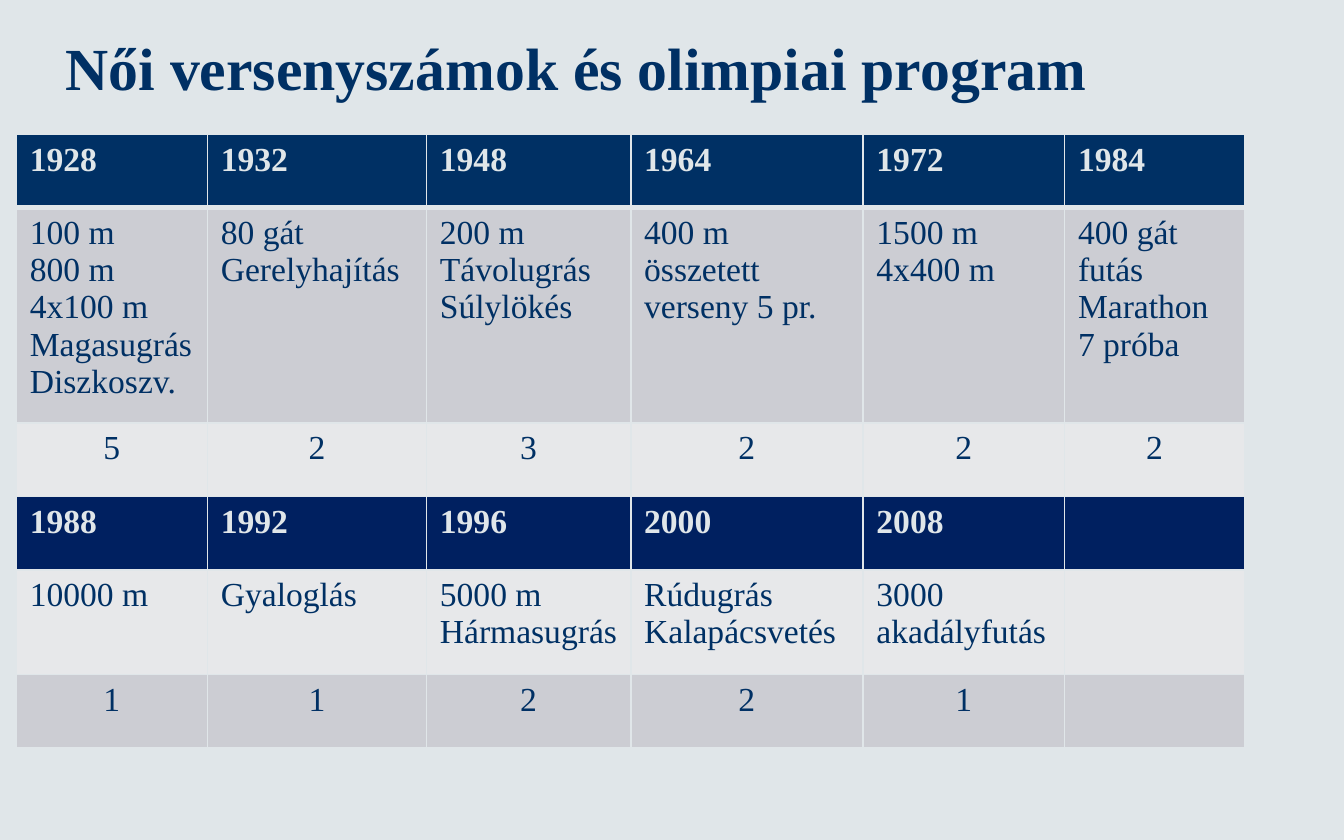
from lxml import etree
from pptx import Presentation
from pptx import util as u
from pptx.dml.color import RGBColor
from pptx.enum import text
from pptx.oxml.ns import qn

FONT = "Times New Roman"
NAVY, DEEP_NAVY, PALE = "003064", "002060", "E0E6E9"
DARK_BAND, LIGHT_BAND = "CCCDD3", "E7E8EA"

COLUMN_WIDTHS = [3.61, 4.14, 3.86, 4.39, 3.81, 3.4]
# Each row: height, fill, kind, cell texts (a line feed starts a new paragraph)
ROWS = [
    (1.39, NAVY, "years", ["1928", "1932", "1948", "1964", "1972", "1984"]),
    (3.99, DARK_BAND, "events", [
        "100 m\n800 m 4x100 m Magasugrás\nDiszkoszv.",
        "80 gát Gerelyhajítás",
        "200 m Távolugrás\nSúlylökés",
        "400 m összetett\nverseny 5 pr.",
        "1500 m 4x400 m",
        "400 gát futás Marathon\n7 próba"]),
    (1.39, LIGHT_BAND, "counts", ["5", "2", "3", "2", "2", "2"]),
    (1.39, DEEP_NAVY, "years", ["1988", "1992", "1996", "2000", "2008", ""]),
    (1.98, LIGHT_BAND, "events", [
        "10000 m", "Gyaloglás", "5000 m Hármasugrás",
        "Rúdugrás Kalapácsvetés", "3000 akadályfutás", ""]),
    (1.39, DARK_BAND, "counts", ["1", "1", "2", "2", "1", ""]),
]


def color(value):
    return RGBColor.from_string(value)


def set_font(paragraph, size, value, bold):
    font = paragraph.font
    font.name, font.size, font.bold = FONT, u.Pt(size), bold
    font.color.rgb = color(value)


def set_borders(cell, widths):
    """Draw the four cell borders; they must come before the fill."""
    properties = cell._tc.get_or_add_tcPr()
    for index, (side, width) in enumerate(widths.items()):
        line = etree.Element(qn(f"a:ln{side}"), w=str(u.Pt(width)))
        fill = etree.SubElement(line, qn("a:solidFill"))
        etree.SubElement(fill, qn("a:srgbClr"), val=PALE)
        properties.insert(index, line)


def add_title(slide, left, top, width, height):
    shape = slide.shapes.add_textbox(*map(u.Cm, (left, top, width, height)))
    frame = shape.text_frame
    frame.word_wrap = True
    frame.vertical_anchor = text.MSO_ANCHOR.MIDDLE
    frame.text = "Női versenyszámok és olimpiai program"
    set_font(frame.paragraphs[0], 32, NAVY, True)


def fill_cell(cell, content, fill, kind):
    cell.fill.solid()
    cell.fill.fore_color.rgb = color(fill)
    cell.text = content
    is_header = kind == "years"
    for paragraph in cell.text_frame.paragraphs:
        set_font(paragraph, 18, PALE if is_header else NAVY, is_header)
        if kind == "counts":
            paragraph.alignment = text.PP_ALIGN.CENTER


def add_program_table(slide, left, top):
    width = sum(COLUMN_WIDTHS)
    height = sum(row[0] for row in ROWS)
    frame = slide.shapes.add_table(
        len(ROWS), len(COLUMN_WIDTHS), *map(u.Cm, (left, top, width, height)))
    table = frame.table
    table.horz_banding = False
    for column, column_width in zip(table.columns, COLUMN_WIDTHS):
        column.width = u.Cm(column_width)
    for row_index, (row_height, fill, kind, contents) in enumerate(ROWS):
        table.rows[row_index].height = u.Cm(row_height)
        # A thicker rule separates the first header from the body
        borders = {"L": 1, "R": 1,
                   "T": 3 if row_index == 1 else 1,
                   "B": 3 if row_index == 0 else 1}
        for column_index, content in enumerate(contents):
            cell = table.cell(row_index, column_index)
            fill_cell(cell, content, fill, kind)
            set_borders(cell, borders)


def main():
    presentation = Presentation()
    presentation.slide_width = u.Cm(25.4)
    presentation.slide_height = u.Cm(15.88)
    slide = presentation.slides.add_slide(presentation.slide_layouts[6])
    slide.background.fill.solid()
    slide.background.fill.fore_color.rgb = color(PALE)

    add_title(slide, 0.99, 0.66, 22.2, 1.19)
    add_program_table(slide, 0.31, 2.54)
    presentation.save("out.pptx")


if __name__ == "__main__":
    main()
